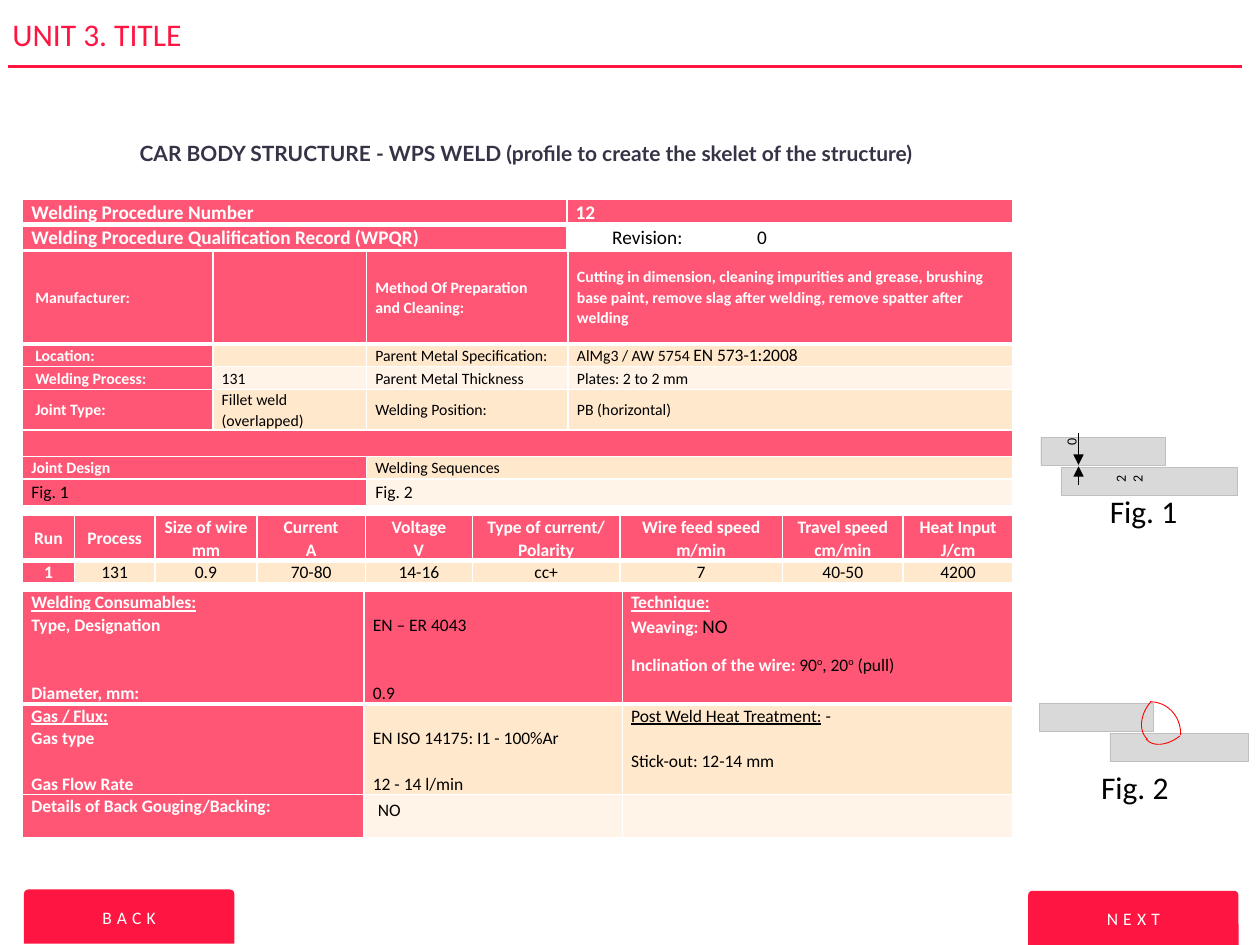
from lxml.etree import SubElement
from pptx import Presentation
from pptx.dml.color import RGBColor
from pptx.enum.shapes import MSO_CONNECTOR, MSO_SHAPE
from pptx.enum.text import MSO_ANCHOR, PP_ALIGN
from pptx.oxml.ns import qn
from pptx.util import Inches, Pt

COLORS = {
    "red": "FF1541", "rose": "FF5675", "cream": "FFE8CC", "pale": "FFF4E7",
    "white": "FFFFFF", "black": "000000", "navy": "363346",
    "gray": "D9D9D9", "edge": "BFBFBF", "weld": "FF0000",
}
FILLS = {"r": "rose", "c": "cream", "p": "pale", ".": None}
PLAIN = {"color": "black", "bold": False}
RAISED = {**PLAIN, "baseline": 30000}
UNDERLINED = {"underline": True}


def rgb(name):
    return RGBColor.from_string(COLORS[name])


class SlideBuilder:
    def __init__(self, slide, font="Calibri"):
        self.slide = slide
        self.font = font

    def format_run(self, run, size, color, bold=False, underline=False,
                   baseline=None, spacing=None, font=None):
        run.font.name = font or self.font
        run.font.size = Pt(size)
        run.font.bold = bold
        run.font.underline = underline
        run.font.color.rgb = rgb(color)
        properties = run._r.get_or_add_rPr()
        if baseline:
            properties.set("baseline", str(baseline))
        if spacing:
            properties.set("spc", str(spacing))

    def fill_frame(self, frame, content, align=PP_ALIGN.LEFT, line_spacing=None, **style):
        lines = content.split("\n") if isinstance(content, str) else content
        for index, line in enumerate(lines):
            paragraph = frame.add_paragraph() if index else frame.paragraphs[0]
            paragraph.alignment = align
            paragraph.line_spacing = line_spacing
            for text, changes in [(line, {})] if isinstance(line, str) else line:
                if text:
                    run = paragraph.add_run()
                    run.text = text
                    self.format_run(run, **{**style, **changes})
            if not paragraph.runs:
                SubElement(paragraph._p, qn("a:endParaRPr"), sz=str(style["size"] * 100))

    def text(self, left, top, width, height, content, wrap=True, rotation=0,
             anchor=MSO_ANCHOR.TOP, **style):
        shape = self.slide.shapes.add_textbox(
            Inches(left), Inches(top), Inches(width), Inches(height))
        shape.rotation = rotation
        shape.text_frame.word_wrap = wrap
        shape.text_frame.vertical_anchor = anchor
        self.fill_frame(shape.text_frame, content, **style)

    def shape(self, kind, left, top, width, height, fill=None, line=None,
              line_width=0.25, adjustments=(), rotation=0, flip=False):
        shape = self.slide.shapes.add_shape(
            kind, Inches(left), Inches(top), Inches(width), Inches(height))
        shape.shadow.inherit = False
        shape.rotation = rotation
        for index, value in enumerate(adjustments):
            shape.adjustments[index] = value
        if flip:
            shape._element.spPr.get_or_add_xfrm().set("flipH", "1")
        if fill:
            shape.fill.solid()
            shape.fill.fore_color.rgb = rgb(fill)
        else:
            shape.fill.background()
        if line:
            shape.line.color.rgb = rgb(line)
            shape.line.width = Pt(line_width)
        else:
            shape.line.fill.background()
        return shape

    def button(self, left, top, label):
        shape = self.shape(MSO_SHAPE.ROUND_2_SAME_RECTANGLE, left, top, 1.67, 0.43,
                           fill="red", adjustments=(0.08, 0))
        shape.text_frame.vertical_anchor = MSO_ANCHOR.MIDDLE
        self.fill_frame(shape.text_frame, label, PP_ALIGN.CENTER,
                        size=10, color="white", spacing=300)

    def line(self, start, end, color, width, arrow=False):
        connector = self.slide.shapes.add_connector(
            MSO_CONNECTOR.STRAIGHT, *map(Inches, start + end))
        connector.line.color.rgb = rgb(color)
        connector.line.width = Pt(width)
        if arrow:
            SubElement(connector.line._get_or_add_ln(), qn("a:tailEnd"), type="triangle")
        SubElement(connector._element.spPr, qn("a:effectLst"))

    def borders(self, cell, bottom):
        properties = cell._tc.get_or_add_tcPr()
        for side, width in (("L", 1), ("R", 1), ("T", 1), ("B", bottom)):
            border = SubElement(properties, qn(f"a:ln{side}"), w=str(Pt(width)))
            fill = SubElement(border, qn("a:solidFill"))
            SubElement(fill, qn("a:srgbClr"), val=COLORS["white"])

    def table(self, top, widths, heights, fills, rows, size, merges=(),
              anchor=MSO_ANCHOR.TOP, align=PP_ALIGN.LEFT):
        frame = self.slide.shapes.add_table(
            len(heights), len(widths), Inches(0.18), Inches(top),
            Inches(sum(widths)), Inches(sum(heights)))
        table = frame.table
        table.first_row = table.horz_banding = False
        for column, width in zip(table.columns, widths):
            column.width = Inches(width)
        for row, height in zip(table.rows, heights):
            row.height = Inches(height)
        for row_index, (codes, contents) in enumerate(zip(fills, rows)):
            for column_index, (code, content) in enumerate(zip(codes, contents)):
                cell = table.cell(row_index, column_index)
                self.borders(cell, 1 if row_index else 3)
                if FILLS[code]:
                    cell.fill.solid()
                    cell.fill.fore_color.rgb = rgb(FILLS[code])
                else:
                    cell.fill.background()
                cell.margin_left = cell.margin_right = Inches(0.07)
                cell.margin_top = cell.margin_bottom = 0
                cell.vertical_anchor = anchor
                style = {"color": "white", "bold": True} if code == "r" else PLAIN
                self.fill_frame(cell.text_frame, content, align, 1.07, size=size, **style)
        for row_index, first, last in merges:
            table.cell(row_index, first).merge(table.cell(row_index, last))
        return table


def add_procedure_tables(builder):
    builder.table(
        1.58, [4.32, 0.29, 1.15, 2.1], [0.2, 0.2], ["rrrr", "r..."],
        [["Welding Procedure Number", "12", "", ""],
         ["Welding Procedure Qualification Record (WPQR)", "", "Revision:", "0"]],
        11, [(0, 1, 3)])
    details = builder.table(
        1.99, [1.51, 1.22, 1.6, 3.53], [0.74, 0.18, 0.18, 0.32, 0.21, 0.18, 0.21],
        ["rrrr", "rccc", "rppp", "rccc", "rrrr", "rrcc", "rrpp"],
        [["Manufacturer:", "", "Method Of Preparation\nand Cleaning:",
          "Cutting in dimension, cleaning impurities and grease, brushing base paint, "
          "remove slag after welding, remove spatter after welding"],
         ["Location:", "", "Parent Metal Specification:",
          [[("AlMg3 / AW 5754 ", {}), ("EN 573-1:2008", {"size": 10})]]],
         ["Welding Process:", "131", "Parent Metal Thickness", "Plates: 2 to 2 mm"],
         ["Joint Type:", "Fillet weld (overlapped)", "Welding Position:", "PB (horizontal)"],
         [""] * 4,
         ["Joint Design", "", "Welding Sequences", ""],
         [[[("Fig. 1", {**PLAIN, "size": 10})]], "", [[("Fig. 2", {"size": 10})]], ""]],
        9, [(4, 0, 3), (5, 0, 1), (5, 2, 3), (6, 0, 1), (6, 2, 3)], MSO_ANCHOR.MIDDLE)
    for row_index in range(4):
        details.cell(row_index, 0).margin_left = Inches(0.1)


def add_run_table(builder):
    builder.table(
        4.09, [0.41, 0.64, 0.81, 0.86, 0.85, 1.17, 1.29, 0.96, 0.87], [0.35, 0.18],
        ["r" * 9, "r" + "c" * 8],
        [["Run", "Process", "Size of wire\nmm", "Current\nA", "Voltage\nV",
          "Type of current/\nPolarity", "Wire feed speed\nm/min",
          "Travel speed\ncm/min", "Heat Input\nJ/cm"],
         ["1", "131", "0.9", "70-80", "14-16", "cc+", "7", "40-50", "4200"]],
        10, anchor=MSO_ANCHOR.MIDDLE, align=PP_ALIGN.CENTER)


def add_consumables_table(builder):
    technique = [
        [("Technique:", UNDERLINED)],
        [("Weaving: ", {}), ("NO", {**PLAIN, "size": 11})],
        [("Inclination of the wire: ", {}), ("90", PLAIN), ("o", RAISED),
         (", 20", PLAIN), ("o", RAISED), (" (pull)", PLAIN)],
    ]
    table = builder.table(
        4.69, [2.71, 2.05, 3.1], [0.89, 0.71, 0.34], ["rrr", "rcc", "rpp"],
        [[[[("Welding Consumables:", UNDERLINED)], "Type, Designation", "Diameter, mm:"],
          [[("EN – ER 4043", PLAIN)], [("0.9", PLAIN)]], technique],
         [[[("Gas / Flux:", UNDERLINED)], "Gas type", "Gas Flow Rate"],
          "EN ISO 14175: I1 - 100%Ar\n12 - 14 l/min",
          [[("Post Weld Heat Treatment:", UNDERLINED), (" -", {})], "Stick-out: 12-14 mm"]],
         ["Details of Back Gouging/Backing:", "NO", ""]],
        10)
    gaps = {(0, 0): 26, (0, 1): 26, (0, 2): 8, (1, 0): 13, (1, 1): 13, (1, 2): 13}
    for position, gap in gaps.items():
        table.cell(*position).text_frame.paragraphs[-1].space_before = Pt(gap)
    for row_index, margin in enumerate((0.18, 0.18, 0.03)):
        table.cell(row_index, 1).margin_top = Inches(margin)
    table.cell(2, 1).margin_left = Inches(0.11)


def add_figures(builder):
    for left, top, number in ((8.71, 3.86, 1), (8.64, 6.05, 2)):
        builder.text(left, top, 0.74, 0.4, f"Fig. {number}", wrap=False,
                     size=18, color="black")
    for left, top, width in ((8.81, 5.82, 1.1), (8.25, 5.58, 0.9),
                             (8.42, 3.71, 1.4), (8.26, 3.47, 0.99)):
        builder.shape(MSO_SHAPE.RECTANGLE, left, top, width, 0.22, "gray", "edge")
    builder.shape(MSO_SHAPE.ARC, 9.09, 5.44, 0.36, 0.49, line="weld",
                  line_width=0.5, rotation=221.7)
    builder.shape(MSO_SHAPE.ARC, 8.89, 5.57, 0.48, 0.5, line="weld",
                  line_width=0.5, adjustments=(162, 2.11))
    builder.shape(MSO_SHAPE.ARC, 9.12, 5.5, 0.3, 0.45, line="weld",
                  line_width=0.5, rotation=231.3, flip=True)
    for start, end in ((3.85, 3.7), (3.44, 3.69)):
        builder.line((8.56, start), (8.56, end), "black", 0.25, arrow=True)
    builder.text(8.38, 3.39, 0.25, 0.24, "0", rotation=270, size=8, color="black")
    builder.text(8.73, 3.51, 0.46, 0.37, "2\n2", rotation=270, size=8, color="black")


def main():
    presentation = Presentation()
    presentation.slide_width = Inches(10)
    presentation.slide_height = Inches(7.5)
    builder = SlideBuilder(presentation.slides.add_slide(presentation.slide_layouts[6]))
    builder.line((0.06, 0.53), (9.86, 0.53), "red", 1.5)
    builder.text(0, 0.07, 4.01, 0.44, "UNIT 3. TITLE", anchor=MSO_ANCHOR.MIDDLE,
                 line_spacing=0.9, size=18, color="red")
    builder.button(0.19, 7.06, "BACK")
    builder.button(8.16, 7.07, "NEXT")
    builder.text(1.01, 1.07, 7.04, 0.3,
                 "CAR BODY STRUCTURE - WPS WELD (profile to create the skelet of the structure)",
                 size=12, color="navy", bold=True, font="Lato")
    add_procedure_tables(builder)
    add_run_table(builder)
    add_consumables_table(builder)
    add_figures(builder)
    presentation.save("out.pptx")


if __name__ == "__main__":
    main()
